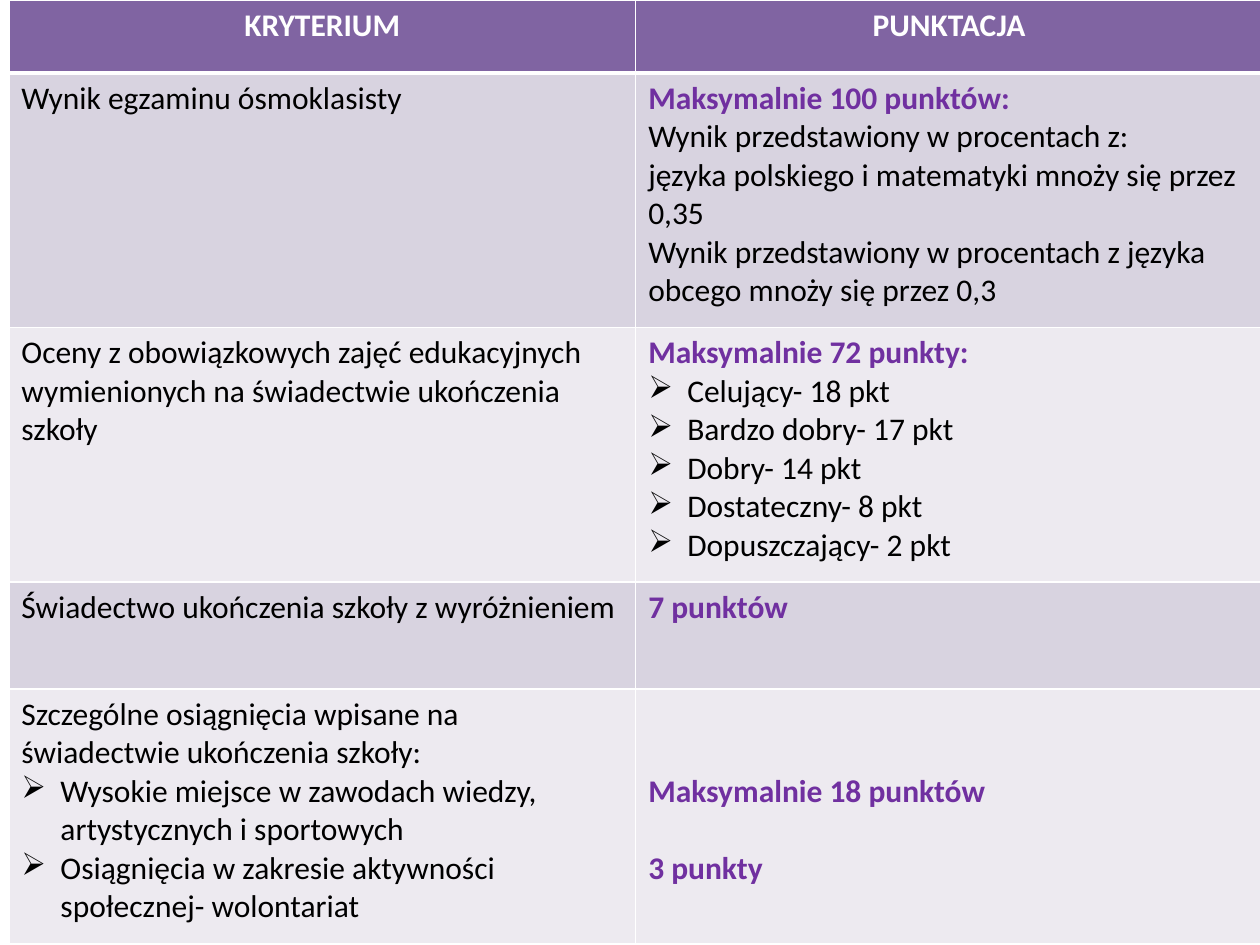
from lxml import etree
from pptx import Presentation, util as u
from pptx.dml.color import RGBColor
from pptx.enum import text
from pptx.oxml.ns import qn

WHITE = RGBColor(0xFF, 0xFF, 0xFF)
BLACK = RGBColor(0, 0, 0)
VIOLET = RGBColor(0x70, 0x30, 0xA0)
HEAD = RGBColor(0x80, 0x64, 0xA2)
BANDS = RGBColor(0xD8, 0xD3, 0xE0), RGBColor(0xED, 0xEA, 0xF0)

LINE = u.Pt(22)
BASE = {"name": "Calibri", "size": u.Pt(18)}
STYLES = {
    "head": {"bold": True, "color": WHITE},
    "plain": {"bold": False, "color": BLACK},
    "item": {"bold": False, "color": BLACK},
    "key": {"bold": True, "color": VIOLET},
}

# Each row: its height, then the (style, text) paragraphs of both cells.
ROWS = [
    (0.58, [("head", "KRYTERIUM")], [("head", "PUNKTACJA")]),
    (2.02,
     [("plain", "Wynik egzaminu ósmoklasisty")],
     [("key", "Maksymalnie 100 punktów:"),
      ("plain", "Wynik przedstawiony w procentach z:"),
      ("plain", "języka polskiego i matematyki mnoży się przez 0,35"),
      ("plain", "Wynik przedstawiony w procentach z języka obcego "
                "mnoży się przez 0,3")]),
    (2.02,
     [("plain", "Oceny z obowiązkowych zajęć edukacyjnych wymienionych "
                "na świadectwie ukończenia szkoły")],
     [("key", "Maksymalnie 72 punkty:"),
      ("item", "Celujący- 18 pkt"),
      ("item", "Bardzo dobry- 17 pkt"),
      ("item", "Dobry- 14 pkt"),
      ("item", "Dostateczny- 8 pkt"),
      ("item", "Dopuszczający- 2 pkt")]),
    (0.85,
     [("plain", "Świadectwo ukończenia szkoły z wyróżnieniem")],
     [("key", "7 punktów")]),
    (2.02,
     [("plain", "Szczególne osiągnięcia wpisane na świadectwie "
                "ukończenia szkoły:"),
      ("item", "Wysokie miejsce w zawodach wiedzy, artystycznych "
               "i sportowych"),
      ("item", "Osiągnięcia w zakresie aktywności społecznej- wolontariat")],
     [("key", "Maksymalnie 18 punktów"), ("key", "3 punkty")]),
]


def add_bullet(par):
    props = par._p.get_or_add_pPr()
    props.set("marL", str(u.Inches(0.31)))
    props.set("indent", str(-u.Inches(0.31)))
    etree.SubElement(props, qn("a:buChar")).set("char", "➢")


def add_edges(cell, widths):
    """Draw white cell borders; widths maps a side to points."""
    props = cell._tc.get_or_add_tcPr()
    for spot, (side, width) in enumerate(widths.items()):
        edge = etree.Element(qn(f"a:ln{side}"), w=str(u.Pt(width)))
        fill = etree.SubElement(edge, qn("a:solidFill"))
        etree.SubElement(fill, qn("a:srgbClr")).set("val", str(WHITE))
        props.insert(spot, edge)


def fill_cell(cell, lines, shade):
    cell.fill.solid()
    cell.fill.fore_color.rgb = shade
    frame = cell.text_frame
    for num, (style, words) in enumerate(lines):
        par = frame.add_paragraph() if num else frame.paragraphs[0]
        if style == "head":
            par.alignment = text.PP_ALIGN.CENTER
        if style == "item":
            add_bullet(par)
        run = par.add_run()
        run.text = words
        for key, value in {**BASE, **STYLES[style]}.items():
            if key == "color":
                run.font.color.rgb = value
            else:
                setattr(run.font, key, value)


def add_grid(slide, left, top, width, height):
    grid = slide.shapes.add_table(len(ROWS), 2, left, top, width, height).table
    for col in grid.columns:
        col.width = width // 2
    for num, (share, *cells) in enumerate(ROWS):
        grid.rows[num].height = u.Inches(share)
        shade = BANDS[(num - 1) % 2] if num else HEAD
        for col, lines in enumerate(cells):
            cell = grid.cell(num, col)
            fill_cell(cell, lines, shade)
            add_edges(cell, {"L": 1, "R": 1, "T": 1 if num != 1 else 3,
                             "B": 1 if num else 3})
    # The last scores line up with the bullets on their left.
    last = grid.cell(len(ROWS) - 1, 1)
    last.margin_top = u.Inches(0.05) + 2 * LINE
    last.text_frame.paragraphs[1].space_before = LINE


def main():
    deck = Presentation()
    deck.slide_width, deck.slide_height = u.Inches(10), u.Inches(7.5)
    slide = deck.slides.add_slide(deck.slide_layouts[6])
    add_grid(slide, u.Inches(0.07), 0, u.Inches(9.95), deck.slide_height)
    deck.save("out.pptx")


if __name__ == "__main__":
    main()
